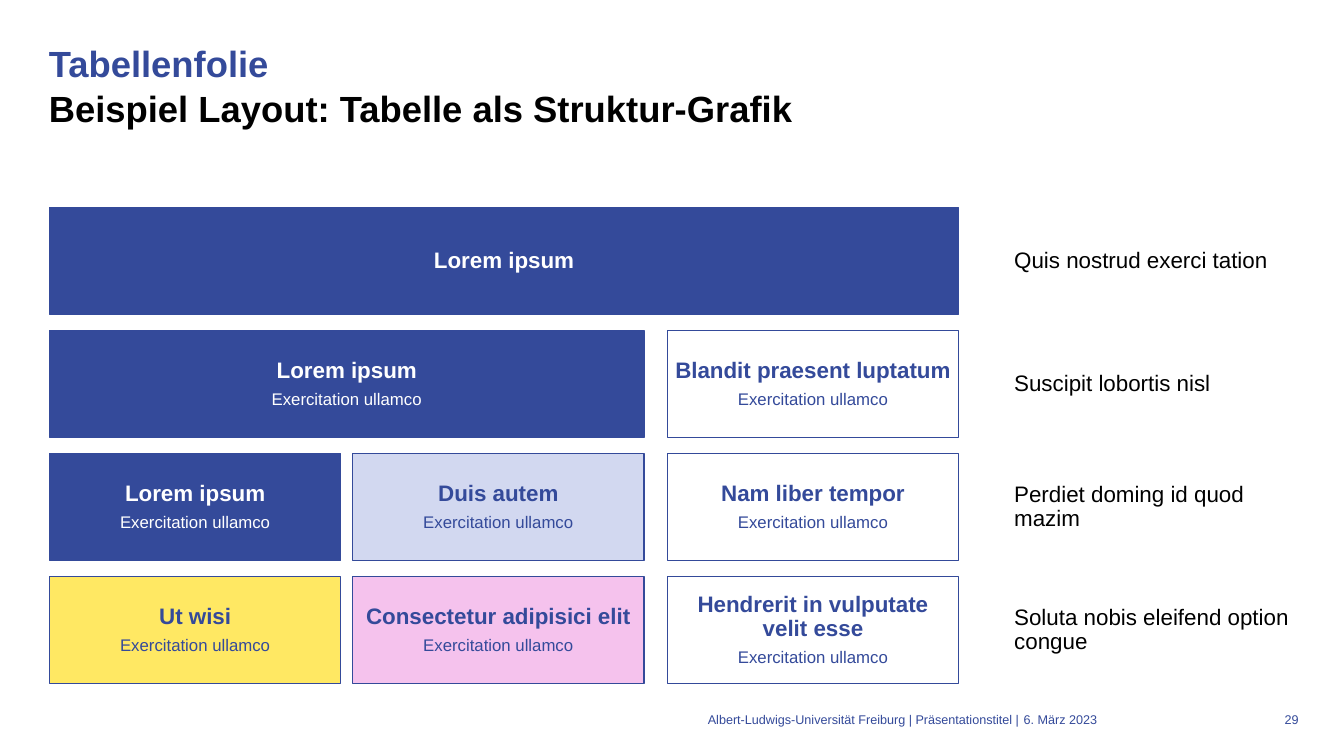
from dataclasses import dataclass

from pptx import Presentation
from pptx import util as u
from pptx.dml.color import RGBColor
from pptx.enum import shapes, text


@dataclass(frozen=True)
class Theme:
    font: str = "Arial"
    blue: str = "344A9A"
    pale: str = "D2D8F0"
    yellow: str = "FFE863"
    pink: str = "F5C2ED"
    white: str = "FFFFFF"
    black: str = "000000"
    title: int = 26
    head: int = 16
    sub: int = 12
    foot: int = 9


class Deck:
    def __init__(self, theme):
        self.theme = theme
        self.prs = Presentation()
        self.prs.slide_width = u.Cm(33.87)
        self.prs.slide_height = u.Cm(19.05)
        self.slide = self.prs.slides.add_slide(self.prs.slide_layouts[5])

    def style(self, font, size, color, bold=False):
        font.name = self.theme.font
        font.size = u.Pt(size)
        font.bold = bold
        font.color.rgb = RGBColor.from_string(color)

    def frame(self, shape, anchor, inset=0):
        """Set wrapping, anchor and equal insets of a shape's text."""
        tf = shape.text_frame
        tf.word_wrap = True
        tf.auto_size = text.MSO_AUTO_SIZE.NONE
        tf.vertical_anchor = anchor
        tf.margin_left = tf.margin_right = u.Cm(inset)
        tf.margin_top = tf.margin_bottom = u.Cm(inset)
        return tf

    def title(self, top, main):
        t = self.theme
        shape = self.slide.shapes.title
        shape.left, shape.top = u.Cm(1.23), u.Cm(1.01)
        shape.width, shape.height = u.Cm(31.5), u.Cm(3.68)
        para = self.frame(shape, text.MSO_ANCHOR.TOP).paragraphs[0]
        para.alignment = text.PP_ALIGN.LEFT
        para.line_spacing = u.Pt(32)
        for line, color in ((top, t.blue), (main, t.black)):
            if para.runs:
                para.add_line_break()
            run = para.add_run()
            run.text = line
            self.style(run.font, t.title, color, True)

    def box(self, area, fill, lines, color, line=None, bold=False,
            align=text.PP_ALIGN.CENTER):
        """Draw a rectangle with a heading and an optional smaller line."""
        t = self.theme
        shape = self.slide.shapes.add_shape(
            shapes.MSO_SHAPE.RECTANGLE, *map(u.Cm, area))
        shape.shadow.inherit = False
        shape.fill.solid()
        shape.fill.fore_color.rgb = RGBColor.from_string(fill)
        if line:
            shape.line.color.rgb = RGBColor.from_string(line)
            shape.line.width = u.Pt(1)
        else:
            shape.line.fill.background()
        tf = self.frame(shape, text.MSO_ANCHOR.MIDDLE, 0.18)
        for i, words in enumerate(lines):
            para = tf.add_paragraph() if i else tf.paragraphs[0]
            para.text = words
            para.alignment = align
            para.line_spacing = 0.9
            if i:
                para.space_before = u.Pt(5.5)
            self.style(para.font, t.sub if i else t.head, color,
                       bold and not i)

    def foot(self, left, width, words, align):
        shape = self.slide.shapes.add_textbox(
            u.Cm(left), u.Cm(17.95), u.Cm(width), u.Cm(0.51))
        para = self.frame(shape, text.MSO_ANCHOR.TOP).paragraphs[0]
        para.text = words
        para.alignment = align
        self.style(para.font, self.theme.foot, self.theme.blue)


COLS = (1.25, 8.89, 16.82, 25.38)
WIDE, HIGH = 7.34, 2.69
TOP, STEP = 5.23, 3.1


def area(row, col, last):
    """Return the bounds of a cell that spans columns col to last."""
    return COLS[col], TOP + row * STEP, COLS[last] + WIDE - COLS[col], HIGH


def main():
    t = Theme()
    deck = Deck(t)
    deck.title("Tabellenfolie", "Beispiel Layout: Tabelle als Struktur-Grafik")

    sub = "Exercitation ullamco"
    cells = (
        (0, 0, 2, t.blue, ["Lorem ipsum"]),
        (1, 0, 1, t.blue, ["Lorem ipsum", sub]),
        (1, 2, 2, t.white, ["Blandit praesent luptatum", sub]),
        (2, 0, 0, t.blue, ["Lorem ipsum", sub]),
        (2, 1, 1, t.pale, ["Duis autem", sub]),
        (2, 2, 2, t.white, ["Nam liber tempor", sub]),
        (3, 0, 0, t.yellow, ["Ut wisi", sub]),
        (3, 1, 1, t.pink, ["Consectetur adipisici elit", sub]),
        (3, 2, 2, t.white, ["Hendrerit in vulputate velit esse", sub]),
    )
    for row, col, last, fill, lines in cells:
        color = t.white if fill == t.blue else t.blue
        deck.box(area(row, col, last), fill, lines, color, t.blue, True)

    notes = ("Quis nostrud exerci tation", "Suscipit lobortis nisl",
             "Perdiet doming id quod mazim",
             "Soluta nobis eleifend option congue")
    for row, note in enumerate(notes):
        deck.box(area(row, 3, 3), t.white, [note], t.black,
                 align=text.PP_ALIGN.LEFT)

    left, right = text.PP_ALIGN.LEFT, text.PP_ALIGN.RIGHT
    deck.foot(8.28, 17.4,
              "Albert-Ludwigs-Universität Freiburg | Präsentationstitel |",
              right)
    deck.foot(25.8, 3.89, "6. März 2023", left)
    deck.foot(31.73, 1, "29", right)
    deck.prs.save("out.pptx")


if __name__ == "__main__":
    main()
